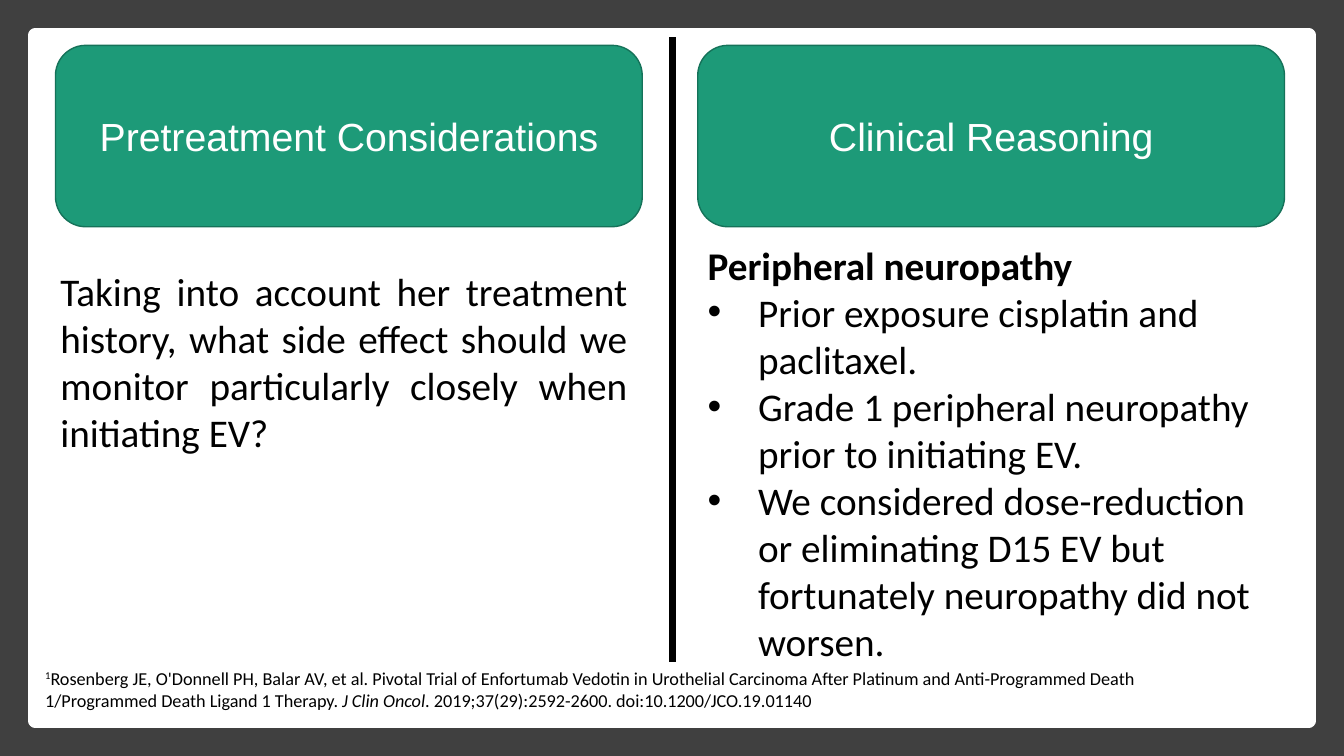
"""Build a two-column slide on pretreatment considerations and clinical reasoning."""
from lxml import etree
from pptx import Presentation
from pptx.dml.color import RGBColor
from pptx.enum.shapes import MSO_CONNECTOR, MSO_SHAPE
from pptx.enum.text import MSO_ANCHOR, MSO_AUTO_SIZE, PP_ALIGN
from pptx.oxml.ns import qn
from pptx.util import Inches, Pt

DARK_GRAY = RGBColor(0x40, 0x40, 0x40)
WHITE = RGBColor(0xFF, 0xFF, 0xFF)
BLACK = RGBColor(0, 0, 0)
GREEN = RGBColor(0x1D, 0x9A, 0x78)
DARK_GREEN = RGBColor(0x15, 0x72, 0x59)

HEADERS = [(0.55, "Pretreatment Considerations"), (6.92, "Clinical Reasoning")]
QUESTION = (
    "Taking into account her treatment history, what side effect should we "
    "monitor particularly closely when initiating EV?"
)
REASONING = [
    "Peripheral neuropathy",
    "Prior exposure cisplatin and paclitaxel.",
    "Grade 1 peripheral neuropathy prior to initiating EV.",
    "We considered dose-reduction or eliminating D15 EV but fortunately "
    "neuropathy did not worsen.",
]
CITATION = [
    "1",
    "Rosenberg JE, O'Donnell PH, Balar AV, et al. Pivotal Trial of Enfortumab "
    "Vedotin in Urothelial Carcinoma After Platinum and Anti-Programmed Death "
    "1/Programmed Death Ligand 1 Therapy. ",
    "J Clin Oncol",
    ". 2019;37(29):2592-2600. doi:10.1200/JCO.19.01140",
]


def add_box(kind, left, top, width, height, fill, line=None, line_width=0):
    shape = slide.shapes.add_shape(
        kind, Inches(left), Inches(top), Inches(width), Inches(height)
    )
    shape.shadow.inherit = False
    shape.fill.solid()
    shape.fill.fore_color.rgb = fill
    if line is None:
        shape.line.fill.background()
    else:
        shape.line.color.rgb = line
        shape.line.width = Pt(line_width)
    return shape


def add_text(left, top, width, height, paragraphs, size):
    text_box = slide.shapes.add_textbox(
        Inches(left), Inches(top), Inches(width), Inches(height)
    )
    frame = text_box.text_frame
    frame.word_wrap = True
    frame.auto_size = MSO_AUTO_SIZE.SHAPE_TO_FIT_TEXT
    for index, pieces in enumerate(paragraphs):
        paragraph = frame.add_paragraph() if index else frame.paragraphs[0]
        for piece in pieces:
            run = paragraph.add_run()
            run.text = piece
            run.font.name = "Calibri"
            run.font.size = Pt(size)
            run.font.color.rgb = BLACK
    return frame.paragraphs


presentation = Presentation()
presentation.slide_width = Inches(13.33)
presentation.slide_height = Inches(7.5)
slide = presentation.slides.add_slide(presentation.slide_layouts[6])

add_box(MSO_SHAPE.RECTANGLE, 0, 0, 13.33, 7.5, DARK_GRAY)
add_box(MSO_SHAPE.RECTANGLE, 0.35, 0.35, 12.63, 6.8, WHITE, WHITE, 10)

for left, title in HEADERS:
    header = add_box(
        MSO_SHAPE.ROUNDED_RECTANGLE, left, 0.45, 5.82, 1.8, GREEN, DARK_GREEN, 1
    )
    frame = header.text_frame
    frame.text = title
    frame.word_wrap = True
    frame.vertical_anchor = MSO_ANCHOR.MIDDLE
    paragraph = frame.paragraphs[0]
    paragraph.alignment = PP_ALIGN.CENTER
    font = paragraph.runs[0].font
    font.name = "Arial"
    font.size = Pt(28)
    font.color.rgb = WHITE

divider = slide.shapes.add_connector(
    MSO_CONNECTOR.STRAIGHT, Inches(6.67), Inches(0.37), Inches(6.67), Inches(6.57)
)
divider.line.color.rgb = BLACK
divider.line.width = Pt(4.5)
etree.SubElement(divider._element.spPr, qn("a:effectLst"))

question = add_text(0.5, 2.6, 5.82, 1.99, [[QUESTION]], 28)
question[0].alignment = PP_ALIGN.JUSTIFY

heading, *points = add_text(
    6.92, 2.34, 5.82, 4.81, [[text] for text in REASONING], 28
)
heading.runs[0].font.bold = True
for point in points:
    properties = point._p.get_or_add_pPr()
    properties.set("marL", str(Inches(0.5)))
    properties.set("indent", str(Inches(-0.5)))
    etree.SubElement(properties, qn("a:buFont"), typeface="Arial")
    etree.SubElement(properties, qn("a:buChar"), char="•")

citation = add_text(0.35, 6.57, 11.74, 0.54, [CITATION], 13)
marker, _, journal, _ = citation[0].runs
marker._r.get_or_add_rPr().set("baseline", "30000")
journal.font.italic = True

presentation.save("out.pptx")
